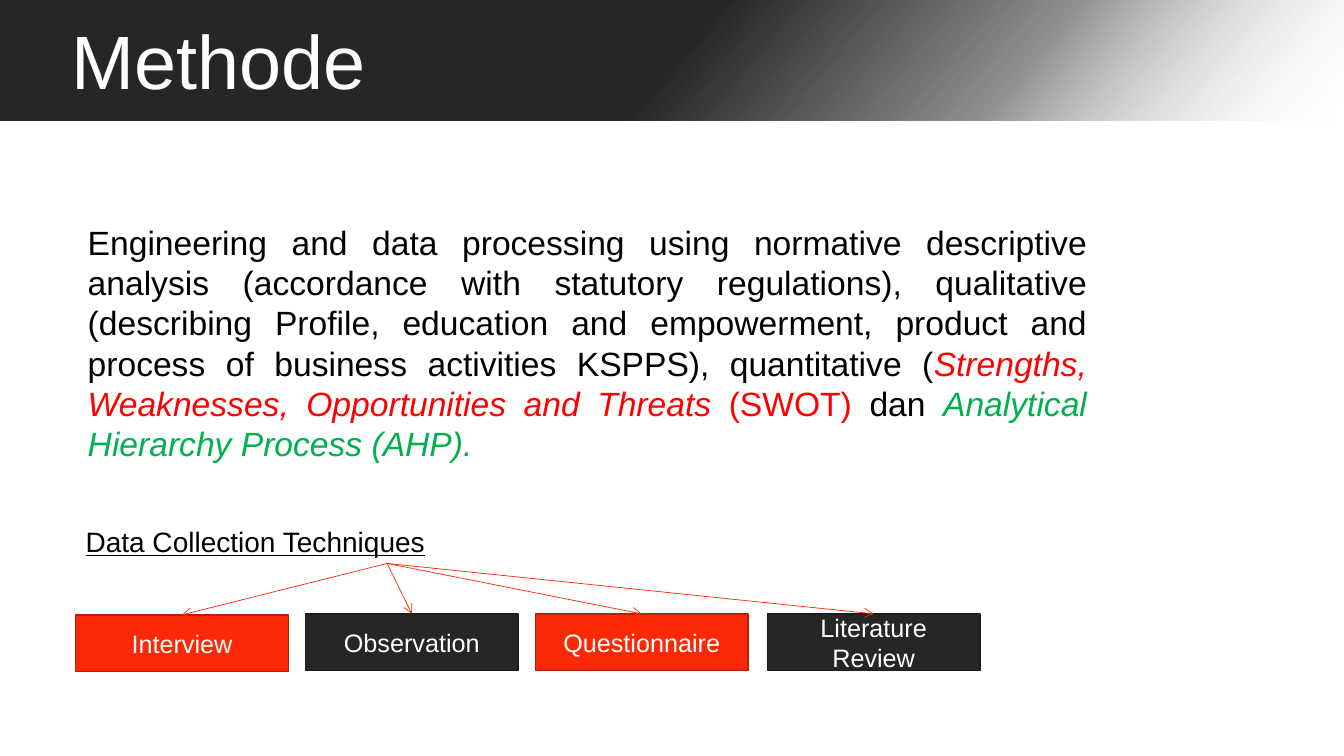
from lxml.etree import SubElement
from pptx import Presentation
from pptx.dml.color import RGBColor
from pptx.enum.dml import MSO_FILL
from pptx.enum.shapes import MSO_CONNECTOR, MSO_SHAPE
from pptx.enum.text import MSO_ANCHOR, MSO_AUTO_SIZE, PP_ALIGN
from pptx.oxml.ns import qn
from pptx.util import Inches, Pt

WHITE = RGBColor(0xFF, 0xFF, 0xFF)
BLACK = RGBColor(0x00, 0x00, 0x00)
DARK = RGBColor(0x26, 0x26, 0x26)
DARK_EDGE = RGBColor(0x1C, 0x1C, 0x1C)
ORANGE = RGBColor(0xFD, 0x29, 0x06)
ORANGE_EDGE = RGBColor(0xBB, 0x1E, 0x04)
RED = RGBColor(0xFF, 0x00, 0x00)
GREEN = RGBColor(0x00, 0xB0, 0x50)

WIDTH, HEIGHT = Inches(13.33), Inches(7.5)
BAND = 0.16  # share of the slide's height
LEFT = Inches(0.75)
BOX_W, BOX_H = Inches(2.11), Inches(0.56)
STOPS = [(0, WHITE, 0), (25, DARK, 50), (50, DARK, 100), (100, DARK, 100)]

METHOD = [
    ("Engineering and data processing using normative descriptive analysis "
     "(accordance with statutory regulations), qualitative (describing Profile, "
     "education and empowerment, product and process of business activities "
     "KSPPS), quantitative (", BLACK, False),
    ("Strengths, Weaknesses, Opportunities and Threats", RED, True),
    (" (SWOT)", RED, False),
    (" dan ", BLACK, False),
    ("Analytical Hierarchy Process (AHP).", GREEN, True),
]
# name, left and top in inches
TOOLS = [
    ("Interview", 0.75, 6.1),
    ("Observation", 3.03, 6.09),
    ("Questionnaire", 5.31, 6.09),
    ("Literature Review", 7.61, 6.09),
]
LOOKS = [(ORANGE, ORANGE_EDGE), (DARK, DARK_EDGE)]


def add_run(para, text, size, color, italic=False):
    run = para.add_run()
    run.text = text
    font = run.font
    font.name, font.size, font.italic = "Arial", Pt(size), italic
    font.color.rgb = color
    return run


def fade(shape):
    """Give the shape a slanted gradient with see-through stops."""
    shape.fill.gradient()
    assert shape.fill.type == MSO_FILL.GRADIENT
    grad = shape._element.spPr.find(qn("a:gradFill"))
    for child in list(grad):
        grad.remove(child)
    stops = SubElement(grad, qn("a:gsLst"))
    for share, color, alpha in STOPS:
        stop = SubElement(stops, qn("a:gs"), pos=str(share * 1000))
        tint = SubElement(stop, qn("a:srgbClr"), val=str(color))
        if alpha < 100:
            SubElement(tint, qn("a:alpha"), val=str(alpha * 1000))
    SubElement(grad, qn("a:lin"), ang=str(220 * 60000), scaled="0")


def add_band(slide):
    band = slide.shapes.add_shape(
        MSO_SHAPE.RECTANGLE, 0, 0, WIDTH, int(HEIGHT * BAND))
    band.shadow.inherit = False
    band.line.fill.background()
    fade(band)
    slide.shapes._spTree.insert(2, band._element)  # behind the title


def set_title(slide, text):
    title = slide.shapes.title
    title.left, title.top = Inches(0.61), Inches(0.25)
    title.width, title.height = Inches(12.4), Inches(0.79)
    frame = title.text_frame
    frame.auto_size = MSO_AUTO_SIZE.NONE
    frame.vertical_anchor = MSO_ANCHOR.MIDDLE
    para = frame.paragraphs[0]
    para.alignment, para.line_spacing = PP_ALIGN.LEFT, 0.9
    add_run(para, text, 54, WHITE)


def add_text(slide, top, width, height, anchor, inset):
    """Add a justified text box; return it with its paragraph."""
    box = slide.shapes.add_textbox(
        LEFT, Inches(top), Inches(width), Inches(height))
    frame = box.text_frame
    frame.word_wrap = True
    frame.auto_size = MSO_AUTO_SIZE.SHAPE_TO_FIT_TEXT
    frame.vertical_anchor = anchor
    frame.margin_left = frame.margin_right = Inches(inset)
    para = frame.paragraphs[0]
    para.alignment = PP_ALIGN.JUSTIFY
    return box, para


def add_tool(slide, name, left, top, look):
    box = slide.shapes.add_shape(
        MSO_SHAPE.RECTANGLE, Inches(left), Inches(top), BOX_W, BOX_H)
    box.shadow.inherit = False
    box.fill.solid()
    box.fill.fore_color.rgb, box.line.color.rgb = look
    box.line.width = Pt(1)
    frame = box.text_frame
    frame.word_wrap = True
    frame.vertical_anchor = MSO_ANCHOR.MIDDLE
    para = frame.paragraphs[0]
    para.alignment = PP_ALIGN.CENTER
    add_run(para, name, 18, WHITE)
    return box


def add_arrow(slide, start, end):
    """Join the bottom of one box to the top of another."""
    arrow = slide.shapes.add_connector(MSO_CONNECTOR.STRAIGHT, 0, 0, 0, 0)
    arrow.begin_connect(start, 2)
    arrow.end_connect(end, 0)
    arrow.line.color.rgb = ORANGE
    arrow.line.width = Pt(0.5)
    SubElement(arrow.line._get_or_add_ln(), qn("a:tailEnd"), type="arrow")
    SubElement(arrow._element.spPr, qn("a:effectLst"))


def main():
    deck = Presentation()
    deck.slide_width, deck.slide_height = WIDTH, HEIGHT
    slide = deck.slides.add_slide(deck.slide_layouts[5])
    add_band(slide)
    set_title(slide, "Methode")

    _, para = add_text(slide, 2.15, 10.15, 2.52, MSO_ANCHOR.TOP, 0.12)
    for text, color, italic in METHOD:
        add_run(para, text, 24, color, italic)

    label, para = add_text(slide, 5.15, 6.18, 0.44, MSO_ANCHOR.MIDDLE, 0.1)
    add_run(para, "Data Collection Techniques", 20, BLACK).font.underline = True

    boxes = [add_tool(slide, name, left, top, LOOKS[i % 2])
             for i, (name, left, top) in enumerate(TOOLS)]
    for box in boxes:
        add_arrow(slide, label, box)
    deck.save("out.pptx")


if __name__ == "__main__":
    main()
